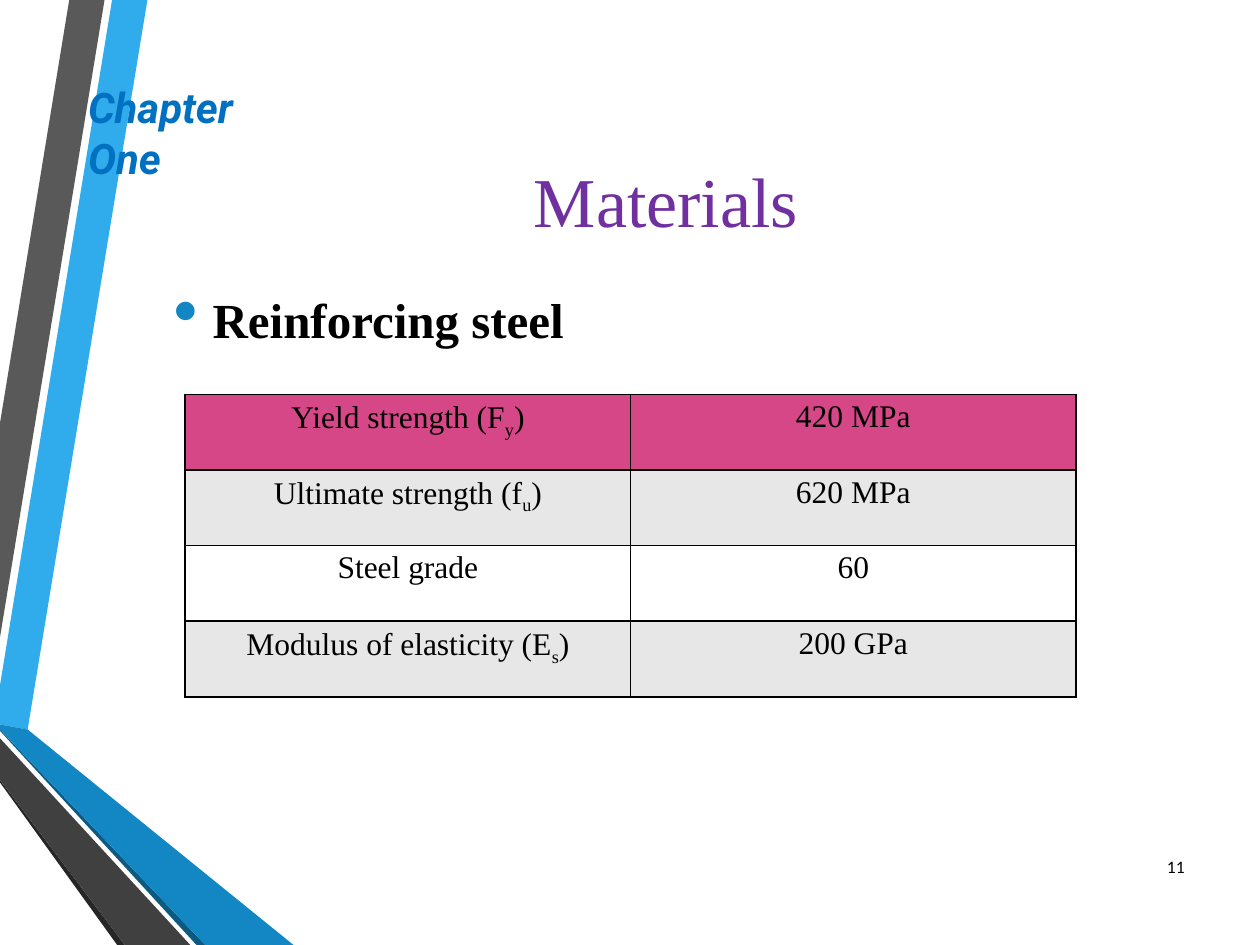
from dataclasses import dataclass

from lxml import etree
from pptx import Presentation
from pptx.dml.color import RGBColor
from pptx.enum.text import MSO_ANCHOR, PP_ALIGN
from pptx.oxml.ns import qn
from pptx.util import Inches, Pt

MIDDLE, TOP = MSO_ANCHOR.MIDDLE, MSO_ANCHOR.TOP
CENTER, LEFT, RIGHT = PP_ALIGN.CENTER, PP_ALIGN.LEFT, PP_ALIGN.RIGHT

BLACK = RGBColor(0x00, 0x00, 0x00)
WHITE = RGBColor(0xFF, 0xFF, 0xFF)
PURPLE = RGBColor(0x70, 0x30, 0xA0)
BLUE = RGBColor(0x00, 0x70, 0xC0)
SKY = RGBColor(0x30, 0xAC, 0xEC)
AZURE = RGBColor(0x12, 0x87, 0xC3)
NAVY = RGBColor(0x0C, 0x5A, 0x82)
GRAY = RGBColor(0x59, 0x59, 0x59)
DARK = RGBColor(0x40, 0x40, 0x40)
COAL = RGBColor(0x26, 0x26, 0x26)
PINK = RGBColor(0xD6, 0x47, 0x87)
PALE = RGBColor(0xE7, 0xE7, 0xE7)
SERIF = "Times New Roman"


@dataclass
class Band:
    color: RGBColor
    points: list[tuple[float, float]]


@dataclass
class Row:
    label: str
    sub: str
    value: str
    fill: RGBColor


@dataclass
class Style:
    font: str
    size: float
    color: RGBColor
    bold: bool = False
    italic: bool = False
    align: PP_ALIGN = LEFT


BANDS = [
    Band(SKY, [(0, 5.44), (0, 5.75), (0.22, 5.79), (1.17, 0), (0.89, 0)]),
    Band(GRAY, [(0.83, 0), (0.55, 0), (0, 3.36), (0, 5.06)]),
    Band(COAL, [(0, 6.19), (0, 6.21), (0.93, 7.5), (0.99, 7.5)]),
    Band(NAVY, [(0, 5.79), (0, 5.8), (1.56, 7.5), (1.63, 7.5)]),
    Band(AZURE, [(0, 5.79), (1.63, 7.5), (2.33, 7.5), (0.22, 5.79), (0, 5.75)]),
    Band(DARK, [(0, 6.19), (0.99, 7.5), (1.51, 7.5), (0, 5.86)]),
]
ROWS = [
    Row("Yield strength (F", "y", "420 MPa", PINK),
    Row("Ultimate strength (f", "u", "620 MPa", PALE),
    Row("Steel grade", "", "60", WHITE),
    Row("Modulus of elasticity (E", "s", "200 GPa", PALE),
]
CELL = Style(SERIF, 18, BLACK, align=CENTER)


def format_text(para, style: Style) -> None:
    font = para.font
    font.name, font.size = style.font, Pt(style.size)
    font.bold, font.italic = style.bold, style.italic
    font.color.rgb = style.color
    para.alignment = style.align


def draw_band(slide, band: Band) -> None:
    first, *rest = [(Inches(x), Inches(y)) for x, y in band.points]
    pen = slide.shapes.build_freeform(*first)
    pen.add_line_segments(rest, close=True)
    shape = pen.convert_to_shape()
    shape.shadow.inherit = False
    shape.fill.solid()
    shape.fill.fore_color.rgb = band.color
    shape.line.fill.background()


def add_text(slide, text: str, box: tuple, style: Style, anchor=TOP):
    frame = slide.shapes.add_textbox(*map(Inches, box)).text_frame
    frame.word_wrap = True
    frame.vertical_anchor = anchor
    frame.text = text
    format_text(frame.paragraphs[0], style)
    return frame


def add_bullet(para, color: RGBColor, percent: int) -> None:
    props = para._p.get_or_add_pPr()
    props.set("marL", str(Inches(0.31)))
    props.set("indent", str(-Inches(0.31)))
    paint = etree.SubElement(props, qn("a:buClr"))
    etree.SubElement(paint, qn("a:srgbClr"), val=str(color))
    etree.SubElement(props, qn("a:buSzPct"), val=str(percent * 1000))
    etree.SubElement(props, qn("a:buChar"), char="•")


def add_borders(cell) -> None:
    props = cell._tc.get_or_add_tcPr()
    for at, side in enumerate(("lnL", "lnR", "lnT", "lnB")):
        line = etree.Element(qn(f"a:{side}"), w=str(Pt(1)))
        paint = etree.SubElement(line, qn("a:solidFill"))
        etree.SubElement(paint, qn("a:srgbClr"), val=str(BLACK))
        props.insert(at, line)


def fill_cell(cell, text: str, sub: str, color: RGBColor) -> None:
    """Write the text, with an optional subscript and closing bracket."""
    cell.margin_left = cell.margin_right = Inches(0.07)
    cell.margin_top = cell.margin_bottom = 0
    cell.fill.solid()
    cell.fill.fore_color.rgb = color
    para = cell.text_frame.paragraphs[0]
    para.line_spacing = 1.15
    format_text(para, CELL)
    para.add_run().text = text
    if sub:
        low = para.add_run()
        low.text = sub
        low._r.get_or_add_rPr().set("baseline", "-25000")
        para.add_run().text = ")"
    add_borders(cell)


def draw_table(slide) -> None:
    box = map(Inches, (1.47, 3.13, 7.07, 2.4))
    table = slide.shapes.add_table(len(ROWS), 2, *box).table
    for at, row in enumerate(ROWS):
        table.rows[at].height = Inches(0.6)
        fill_cell(table.cell(at, 0), row.label, row.sub, row.fill)
        fill_cell(table.cell(at, 1), row.value, "", row.fill)


def set_title(slide) -> None:
    title = slide.shapes.title
    title.left, title.top = Inches(1.07), Inches(0.5)
    title.width, title.height = Inches(8.43), Inches(2.17)
    title.text_frame.text = "Materials"
    title.text_frame.vertical_anchor = MIDDLE
    format_text(title.text_frame.paragraphs[0],
                Style(SERIF, 40, PURPLE, align=CENTER))


def main() -> None:
    deck = Presentation()
    deck.slide_width, deck.slide_height = Inches(10), Inches(7.5)
    slide = deck.slides.add_slide(deck.slide_layouts[5])
    for band in BANDS:
        draw_band(slide, band)
    set_title(slide)
    body = add_text(slide, "Reinforcing steel", (1.28, 2.03, 7.44, 3.95),
                    Style(SERIF, 28, BLACK, bold=True))
    body.margin_top = Inches(0.27)
    add_bullet(body.paragraphs[0], AZURE, 145)
    add_text(slide, "11", (9.03, 6.68, 0.47, 0.4),
             Style("Calibri", 10, BLACK, align=RIGHT), MIDDLE)
    draw_table(slide)
    add_text(slide, "Chapter One", (0.6, 0.6, 1.51, 0.5),
             Style("Roboto", 24, BLUE, bold=True, italic=True))
    deck.save("out.pptx")


if __name__ == "__main__":
    main()
